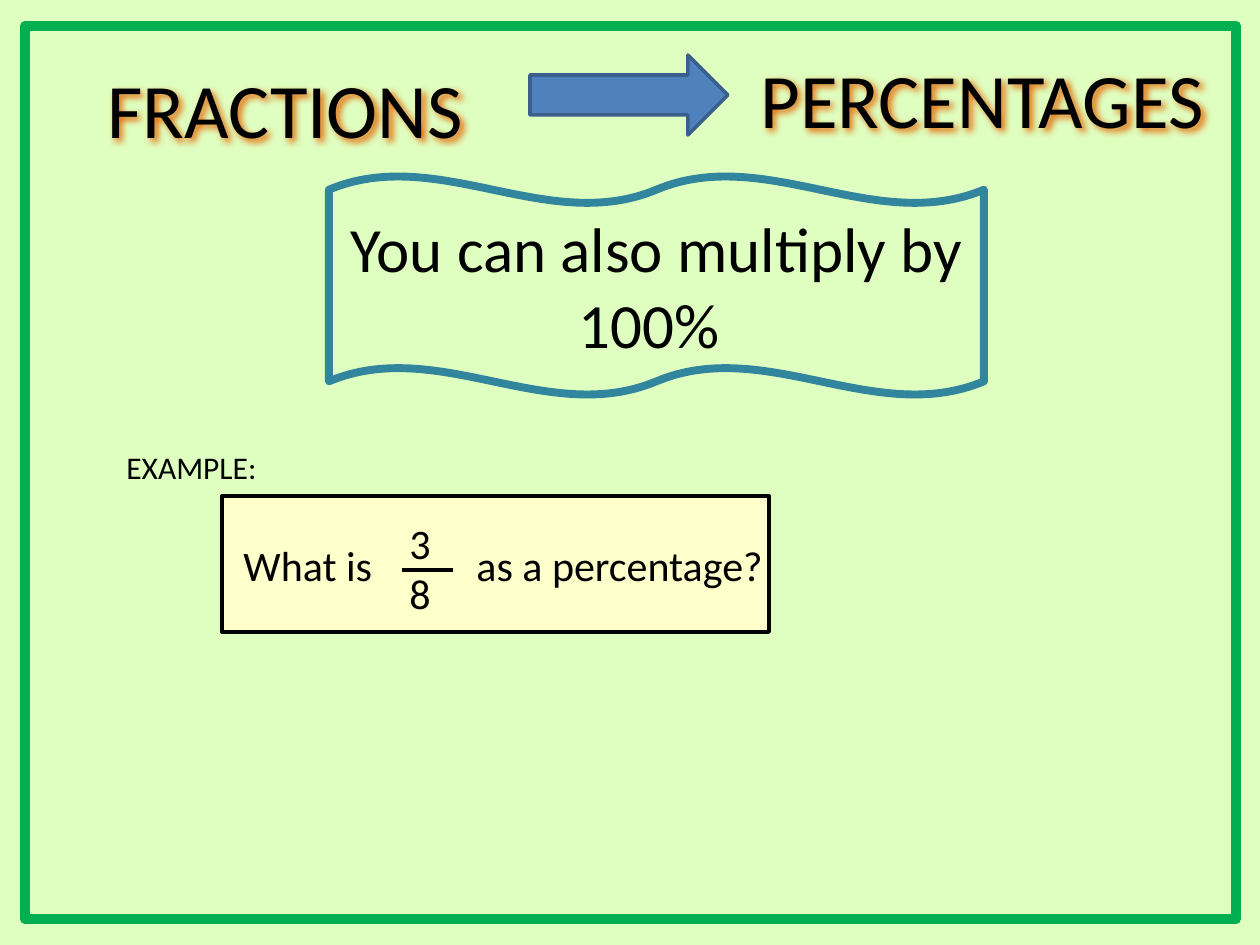
"""Build a slide on turning fractions into percentages."""
from lxml import etree
from pptx import Presentation
from pptx.dml.color import RGBColor
from pptx.enum.shapes import MSO_CONNECTOR as Link, MSO_SHAPE as Kind
from pptx.enum.text import MSO_ANCHOR as Anchor, MSO_AUTO_SIZE as Fit, PP_ALIGN as Align
from pptx.oxml import parse_xml
from pptx.oxml.ns import nsdecls, qn
from pptx.util import Emu, Pt

FONT, INK, GLOW = "Calibri", "000000", "E46C0A"
PAGE = (1260, 945)
HEAD = ("FRACTIONS", (95, 55, 476, 106), 44)
GOAL = ("PERCENTAGES", (748, 45, 480, 106), 44)
RULE = "You can also multiply by 100% "
SHAPES = {
    "frame": (Kind.RECTANGLE, (25, 26, 1211, 893), None, "00B050", 6),
    "arrow": (Kind.RIGHT_ARROW, (530, 55, 198, 80), "4F81BD", "3A5F8C", 2),
    "wave": (Kind.DOUBLE_WAVE, (329, 176, 655, 219), None, "31859C", 4.5),
    "card": (Kind.RECTANGLE, (222, 496, 547, 136), "FFFFCC", INK, 2.25),
}
LABELS = [
    ("EXAMPLE:", (114, 442, 377, 47), 18),
    ("What is", (231, 533, 160, 63), 24),
    ("as a percentage?", (464, 533, 320, 63), 24),
    ("3", (397, 511, 47, 64), 24),
    ("8", (397, 561, 47, 64), 24),
]
BAR = (402, 570, 453, 570)


def px(n):
    return Emu(round(n * 914400 / 126))


def tint(code):
    return RGBColor.from_string(code)


def write(shape, text, size, align=Align.LEFT, anchor=Anchor.TOP):
    frame = shape.text_frame
    frame.word_wrap = True
    frame.auto_size = Fit.NONE
    frame.vertical_anchor = anchor
    para = frame.paragraphs[0]
    para.alignment = align
    run = para.add_run()
    run.text = text
    run.font.name, run.font.size = FONT, Pt(size)
    run.font.color.rgb = tint(INK)


def draw(kind, box, fill, edge, width):
    shape = slide.shapes.add_shape(kind, *map(px, box))
    shape.shadow.inherit = False
    if fill:
        shape.fill.solid()
        shape.fill.fore_color.rgb = tint(fill)
    else:
        shape.fill.background()
    shape.line.color.rgb = tint(edge)
    shape.line.width = Pt(width)
    return shape


def label(text, box, size):
    shape = slide.shapes.add_textbox(*map(px, box))
    write(shape, text, size)
    return shape


def shade(shape):
    shape._element.spPr.append(parse_xml(
        f'<a:effectLst {nsdecls("a")}><a:outerShdw blurRad="50800" dist="25400" '
        f'dir="2700000"><a:srgbClr val="{GLOW}"/></a:outerShdw></a:effectLst>'))


deck = Presentation()
deck.slide_width, deck.slide_height = map(px, PAGE)
slide = deck.slides.add_slide(deck.slide_layouts[5])
slide.background.fill.solid()
slide.background.fill.fore_color.rgb = tint("DFFFC0")

title = slide.shapes.title
text, box, size = HEAD
title.left, title.top, title.width, title.height = map(px, box)
write(title, text, size)
shade(title)
shade(label(*GOAL))

made = {name: draw(*spec) for name, spec in SHAPES.items()}
write(made["wave"], RULE, 36, Align.CENTER, Anchor.MIDDLE)
for item in LABELS:
    label(*item)

bar = slide.shapes.add_connector(Link.STRAIGHT, *map(px, BAR))
bar.line.color.rgb = tint(INK)
bar.line.width = Pt(2.25)
etree.SubElement(bar._element.spPr, qn("a:effectLst"))

deck.save("out.pptx")
